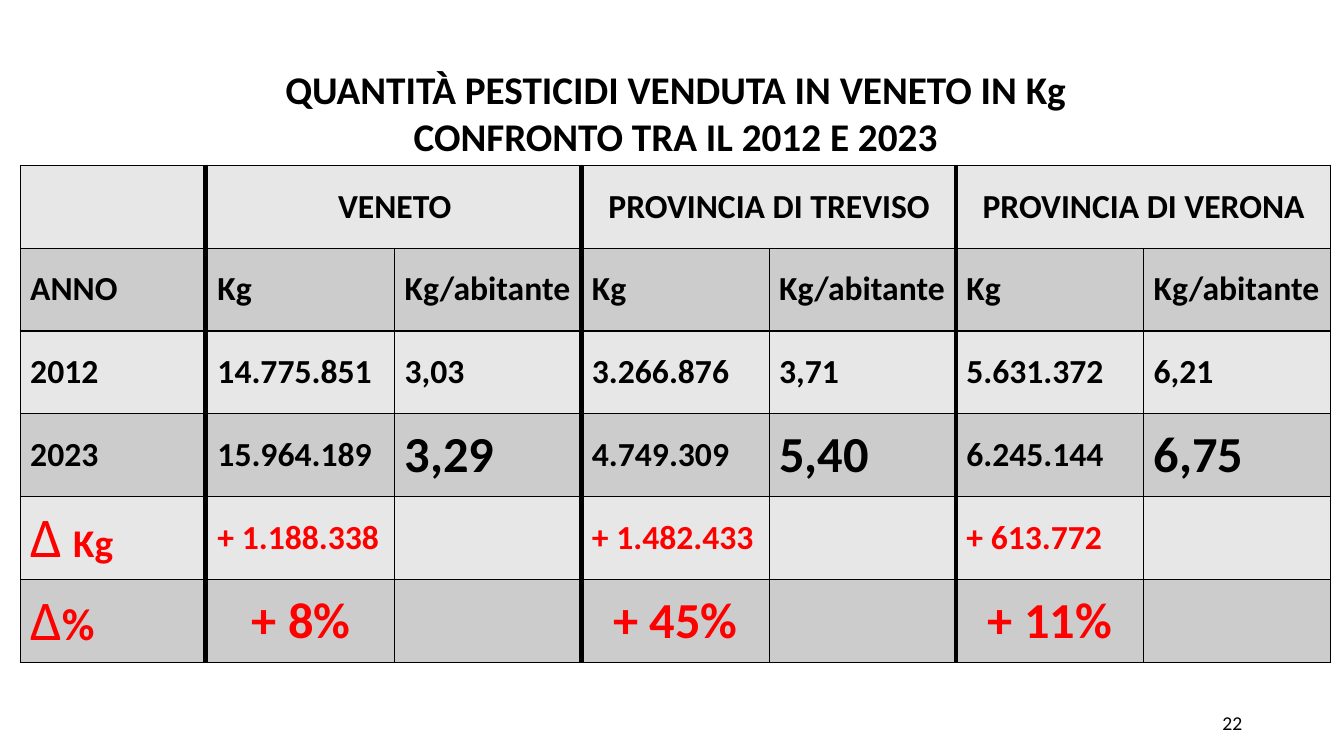
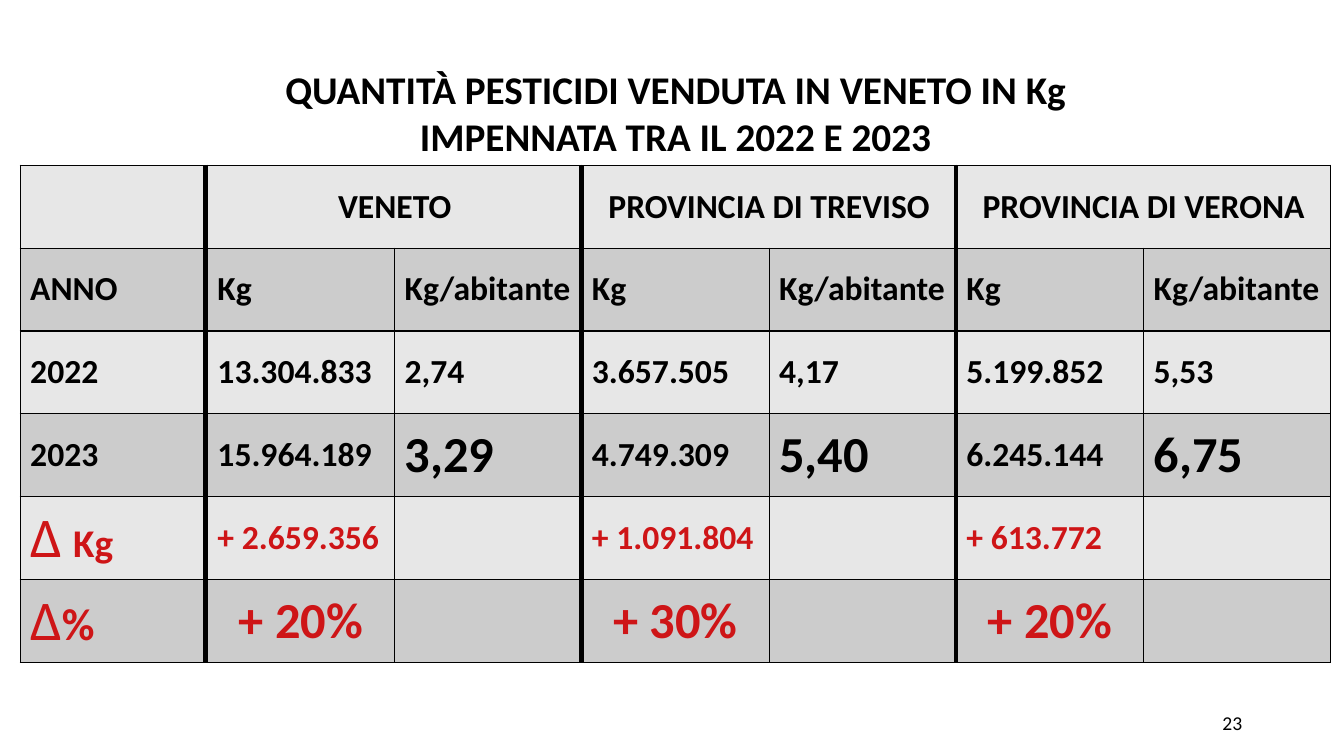
"""Build two slides comparing pesticide sales in Veneto between two years."""
from lxml import etree
from pptx import Presentation
from pptx.dml.color import RGBColor
from pptx.enum.shapes import MSO_CONNECTOR
from pptx.enum.text import MSO_ANCHOR, PP_ALIGN
from pptx.oxml.ns import qn
from pptx.util import Inches, Pt

STRAIGHT = MSO_CONNECTOR.STRAIGHT
TOP, MIDDLE = MSO_ANCHOR.TOP, MSO_ANCHOR.MIDDLE
LEFT, CENTER, RIGHT = PP_ALIGN.LEFT, PP_ALIGN.CENTER, PP_ALIGN.RIGHT

BLACK = RGBColor(0x00, 0x00, 0x00)
BRIGHT_RED = RGBColor(0xFF, 0x00, 0x00)
DARK_RED = RGBColor(0xCE, 0x15, 0x17)
BANDS = (RGBColor(0xE7, 0xE7, 0xE7), RGBColor(0xCC, 0xCC, 0xCC))

FONT = "Calibri"
BODY_SIZE, LARGE_SIZE = 24, 36
TABLE_LEFT, TABLE_TOP, TABLE_WIDTH, TABLE_HEIGHT = 0.2, 1.64, 13, 4.93
ROW_COUNT, COLUMN_COUNT = 6, 7
DIVIDERS = (2.04, 5.77, 9.48)

TITLE = "QUANTITÀ PESTICIDI VENDUTA IN VENETO IN Kg"
AREAS = ("VENETO", "PROVINCIA DI TREVISO", "PROVINCIA DI VERONA")
SALES_2012 = ("14.775.851", "3,03", "3.266.876", "3,71", "5.631.372", "6,21")
SALES_2022 = ("13.304.833", "2,74", "3.657.505", "4,17", "5.199.852", "5,53")
SALES_2023 = ("15.964.189", "3,29", "4.749.309", "5,40", "6.245.144", "6,75")
DELTA_KG = (("Δ", 40, False), (" ", 36, False), ("Kg", 28, True))
DELTA_PERCENT = (("Δ", 40, False), ("%", 32, True))


def add_span(para, text, size, bold=True, color=BLACK):
    span = para.add_run()
    span.text = text
    span.font.name = FONT
    span.font.size = Pt(size)
    span.font.bold = bold
    span.font.color.rgb = color


def add_text(page, place, lines, size, align, anchor=TOP, bold=False):
    box = page.shapes.add_textbox(*map(Inches, place))
    frame = box.text_frame
    frame.word_wrap = True
    frame.vertical_anchor = anchor
    for index, line in enumerate(lines):
        para = frame.add_paragraph() if index else frame.paragraphs[0]
        para.alignment = align
        add_span(para, line, size, bold)


def add_divider(page, x):
    divider = page.shapes.add_connector(
        STRAIGHT, Inches(x), Inches(TABLE_TOP),
        Inches(x), Inches(TABLE_TOP + TABLE_HEIGHT))
    divider.line.color.rgb = BLACK
    divider.line.width = Pt(3.25)
    etree.SubElement(divider._element.spPr, qn("a:effectLst"))


def set_borders(cell):
    properties = cell._tc.get_or_add_tcPr()
    for side in ("a:lnL", "a:lnR", "a:lnT", "a:lnB"):
        border = etree.SubElement(properties, qn(side), w=str(Pt(1)))
        fill = etree.SubElement(border, qn("a:solidFill"))
        etree.SubElement(fill, qn("a:srgbClr"), val=str(BLACK))


def add_grid(page):
    frame = page.shapes.add_table(
        ROW_COUNT, COLUMN_COUNT, Inches(TABLE_LEFT), Inches(TABLE_TOP),
        Inches(TABLE_WIDTH), Inches(TABLE_HEIGHT))
    table = frame.table
    table.first_row = table.horz_banding = False
    for row_index, row in enumerate(table.rows):
        for cell in row.cells:
            set_borders(cell)
            cell.fill.solid()
            cell.fill.fore_color.rgb = BANDS[row_index % 2]
            cell.vertical_anchor = MIDDLE
    return table


def write_cell(cell, spans, color=BLACK, align=LEFT):
    para = cell.text_frame.paragraphs[0]
    para.alignment = align
    for text, size, bold in spans:
        add_span(para, text, size, bold, color)


def add_sales_table(page, year, sales, growth, percents, accent):
    table = add_grid(page)
    for index, area in enumerate(AREAS):
        column = 1 + 2 * index
        heading = table.cell(0, column)
        heading.merge(table.cell(0, column + 1))
        write_cell(heading, [(area, BODY_SIZE, True)], align=CENTER)
        write_cell(table.cell(4, column), [(growth[index], BODY_SIZE, True)], accent)
        write_cell(table.cell(5, column), [(percents[index], LARGE_SIZE, True)],
                   accent, CENTER)

    rows = (("ANNO", *("Kg", "Kg/abitante") * len(AREAS)),
            (year, *sales), ("2023", *SALES_2023))
    for row_index, values in enumerate(rows, start=1):
        for column, value in enumerate(values):
            per_head = row_index == 3 and column in (2, 4, 6)
            size = LARGE_SIZE if per_head else BODY_SIZE
            write_cell(table.cell(row_index, column), [(value, size, True)])
    write_cell(table.cell(4, 0), DELTA_KG, accent)
    write_cell(table.cell(5, 0), DELTA_PERCENT, accent)


def add_page(deck, number, subtitle, **comparison):
    page = deck.slides.add_slide(deck.slide_layouts[6])
    add_text(page, (9.42, 6.97, 3, 0.4), [number], 14, RIGHT, MIDDLE)
    add_sales_table(page, **comparison)
    add_text(page, (1.5, 0.6, 10.4, 1.04), [TITLE, subtitle], 28, CENTER, bold=True)
    for x in DIVIDERS:
        add_divider(page, x)


def main():
    deck = Presentation()
    deck.slide_width, deck.slide_height = Inches(13.33), Inches(7.5)
    add_page(deck, "22", "CONFRONTO TRA IL 2012 E 2023",
             year="2012", sales=SALES_2012,
             growth=("+ 1.188.338", "+ 1.482.433", "+ 613.772"),
             percents=("+ 8%", "+ 45%", "+ 11%"), accent=BRIGHT_RED)
    add_page(deck, "23", "IMPENNATA TRA IL 2022 E 2023",
             year="2022", sales=SALES_2022,
             growth=("+ 2.659.356", "+ 1.091.804", "+ 613.772"),
             percents=("+ 20%", "+ 30%", "+ 20%"), accent=DARK_RED)
    deck.save("out.pptx")


if __name__ == "__main__":
    main()
